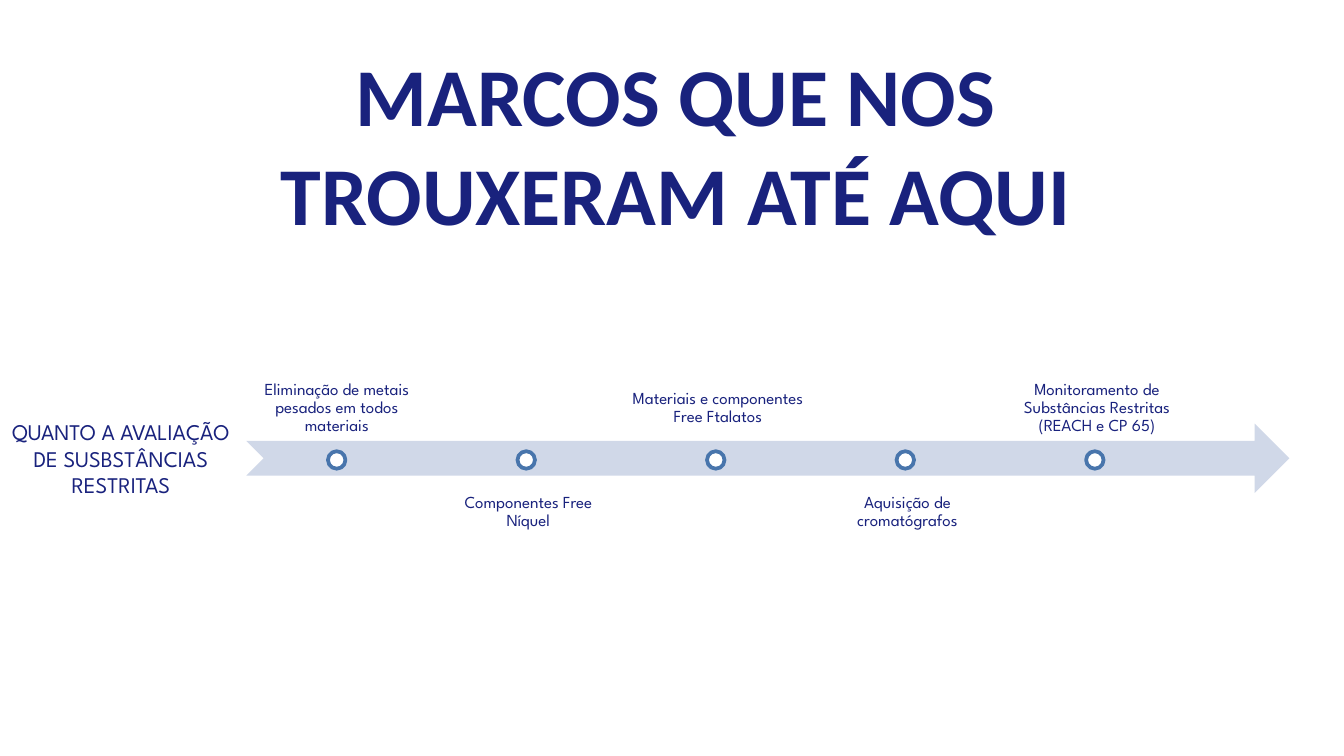
from dataclasses import dataclass

from pptx import Presentation
from pptx.dml.color import RGBColor
from pptx.enum.shapes import MSO_SHAPE
from pptx.enum.text import MSO_ANCHOR, MSO_AUTO_SIZE, PP_ALIGN
from pptx.util import Inches, Pt


@dataclass(frozen=True)
class Theme:
    ink: RGBColor = RGBColor(0x19, 0x22, 0x7D)
    band: RGBColor = RGBColor(0xD0, 0xD8, 0xE8)
    ring: RGBColor = RGBColor(0x48, 0x75, 0xAC)
    paper: RGBColor = RGBColor(0xFF, 0xFF, 0xFF)
    title_font: str = "Calibri"
    body_font: str = "League Spartan"
    title_size: int = 44
    caption_size: int = 12
    label_size: int = 9


THEME = Theme()
W = 10
H = W * 9 / 16
COL, ROW = W / 100, H / 100
TITLE = "MARCOS QUE NOS TROUXERAM ATÉ AQUI"
CAPTION = "QUANTO A AVALIAÇÃO DE SUSBSTÂNCIAS RESTRITAS"
MILESTONES = [
    "Eliminação de metais pesados em todos materiais",
    "Componentes Free Níquel",
    "Materiais e componentes Free Ftalatos",
    "Aquisição de cromatógrafos",
    "Monitoramento de Substâncias Restritas (REACH e CP 65)",
]


def set_all(target, **values):
    for name, value in values.items():
        setattr(target, name, value)


def inches(*box):
    return [Inches(v) for v in box]


def grid_box(col, row, cols, rows):
    return col * COL, row * ROW, cols * COL, rows * ROW


def write(sp, text, font, size, bold=False, spacing=1.0, anchor=MSO_ANCHOR.MIDDLE, margins=None):
    """Fill a shape with one centred paragraph; margins are left, top, right, bottom."""
    tf = sp.text_frame
    set_all(tf, word_wrap=True, auto_size=MSO_AUTO_SIZE.NONE, vertical_anchor=anchor)
    if margins:
        sides = ("margin_left", "margin_top", "margin_right", "margin_bottom")
        set_all(tf, **dict(zip(sides, inches(*margins))))
    p = tf.paragraphs[0]
    set_all(p, alignment=PP_ALIGN.CENTER, line_spacing=spacing)
    r = p.add_run()
    r.text = text
    set_all(r.font, name=font, size=Pt(size), bold=bold)
    r.font.color.rgb = THEME.ink


def add_filled(s, kind, box, fill, line=None):
    sp = s.shapes.add_shape(kind, *inches(*box))
    sp.shadow.inherit = False
    sp.fill.solid()
    sp.fill.fore_color.rgb = fill
    if line:
        sp.line.color.rgb = line
        sp.line.width = Pt(2)
    else:
        sp.line.fill.background()
    return sp


def add_title(s, box):
    sp = s.shapes.title
    set_all(sp, **dict(zip(("left", "top", "width", "height"), inches(*box))))
    write(sp, TITLE, THEME.title_font, THEME.title_size, bold=True)


def add_caption(s, box):
    sp = s.shapes.add_textbox(*inches(*box))
    write(sp, CAPTION, THEME.body_font, THEME.caption_size, anchor=MSO_ANCHOR.TOP)


def add_timeline(s, box, milestones):
    """Draw an arrow with evenly spaced dots, labelled above and below in turn."""
    x, y, w, h = box
    band_h, dot = 0.4 * h, 0.13
    # Labels share 90% of the arrow; gaps are 5% of a label's width.
    label_w = 0.9 * w / (len(milestones) + 0.05 * (len(milestones) - 1))
    add_filled(s, MSO_SHAPE.NOTCHED_RIGHT_ARROW, (x, y + 0.29 * h, w, band_h), THEME.band)
    for i, text in enumerate(milestones):
        left = x + i * 1.05 * label_w
        top = y + (0.6 * h if i % 2 else 0)
        sp = s.shapes.add_textbox(*inches(left, top, label_w, band_h))
        margins = (0.05, 0.02, 0.02, 0.02) if i else (0.07,) * 4
        write(sp, text, THEME.body_font, THEME.label_size, spacing=0.9, margins=margins)
        dot_box = (left + (label_w - dot) / 2, y + (h - dot) / 2, dot, dot)
        add_filled(s, MSO_SHAPE.OVAL, dot_box, THEME.paper, THEME.ring)


def main():
    prs = Presentation()
    set_all(prs, slide_width=Inches(W), slide_height=Inches(H))
    s = prs.slides.add_slide(prs.slide_layouts[5])
    add_title(s, grid_box(11.44, 14.6, 77.7, 8.7))
    add_timeline(s, grid_box(18.34, 49.4, 77.6, 22.9), MILESTONES)
    add_caption(s, grid_box(-0.3, 54.4, 18.6, 16.2))
    prs.save("out.pptx")


if __name__ == "__main__":
    main()
